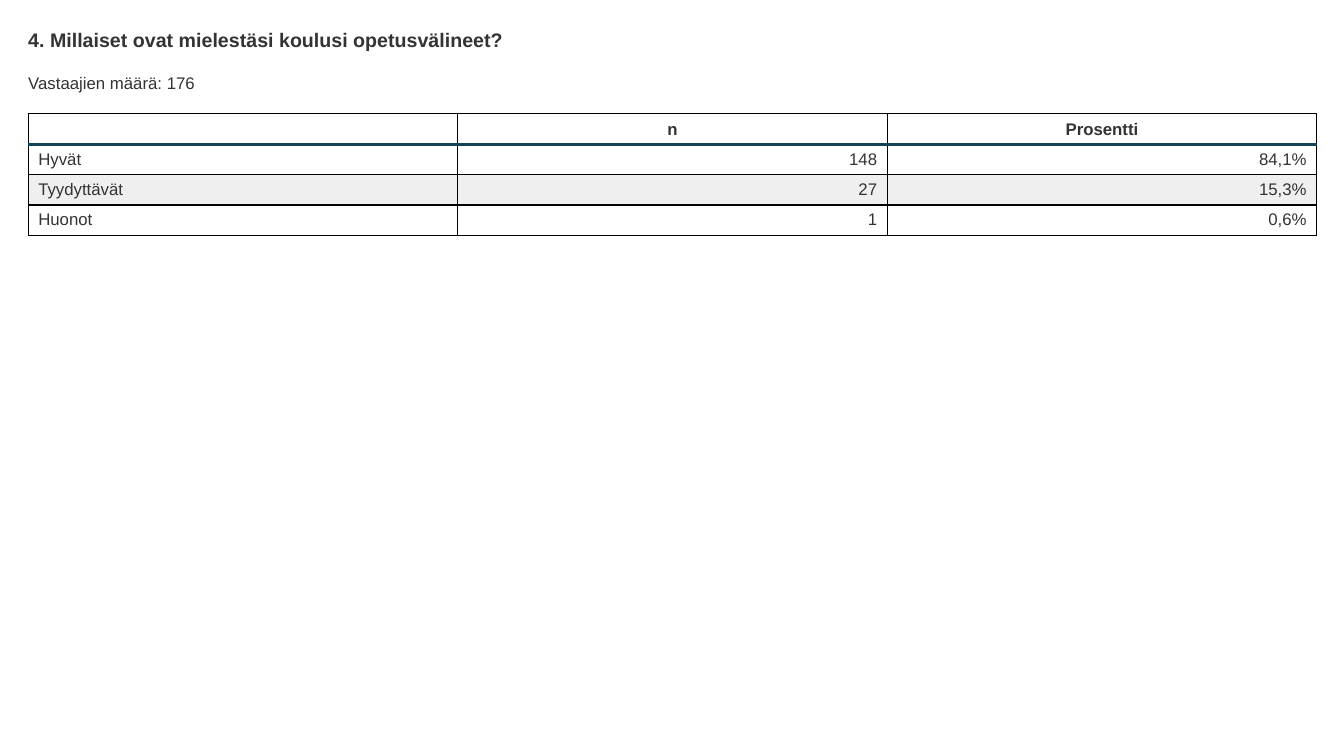
from dataclasses import dataclass

from lxml import etree
from pptx import Presentation
from pptx.dml.color import RGBColor
from pptx.enum.text import MSO_ANCHOR, MSO_AUTO_SIZE, PP_ALIGN
from pptx.oxml.ns import qn
from pptx.util import Inches, Pt

LEFT, MID, RIGHT = PP_ALIGN.LEFT, PP_ALIGN.CENTER, PP_ALIGN.RIGHT
TOP, CENTER = MSO_ANCHOR.TOP, MSO_ANCHOR.MIDDLE
FIXED = MSO_AUTO_SIZE.NONE


@dataclass(frozen=True)
class Theme:
    """Hold the colours, type sizes and line widths."""
    font: str = "Arial"
    ink: str = "333333"
    rule: str = "124456"
    grid: str = "000000"
    band: str = "EFEFEF"
    plain: str = "FFFFFF"
    head: int = 14
    body: int = 12
    thin: int = 1
    thick: int = 2


THEME = Theme()
EDGE, WIDE = 0.28, 12.78
ROW = 0.3
ROWS = [
    ("", "n", "Prosentti"),
    ("Hyvät", "148", "84,1%"),
    ("Tyydyttävät", "27", "15,3%"),
    ("Huonot", "1", "0,6%"),
]


def style(para, size, bold, align):
    """Format a paragraph and its runs."""
    para.alignment = align
    for run in para.runs:
        font = run.font
        font.name, font.size, font.bold = THEME.font, Pt(size), bold
        font.color.rgb = RGBColor.from_string(THEME.ink)


def write(shape, text, top, high, size, bold):
    """Place a line of text across the slide."""
    shape.left, shape.top = Inches(EDGE), Inches(top)
    shape.width, shape.height = Inches(WIDE), Inches(high)
    frame = shape.text_frame
    frame.text = text
    frame.word_wrap = True
    frame.auto_size = FIXED
    frame.vertical_anchor = TOP
    frame.margin_left = frame.margin_right = 0
    frame.margin_top = frame.margin_bottom = 0
    style(frame.paragraphs[0], size, bold, LEFT)


def border(cell, side, color, width):
    """Draw one side of a cell."""
    props = cell._tc.get_or_add_tcPr()
    line = etree.SubElement(props, qn(f"a:ln{side}"), w=str(Pt(width)))
    fill = etree.SubElement(line, qn("a:solidFill"))
    etree.SubElement(fill, qn("a:srgbClr"), val=color)


def fill_cell(cell, text, row, col):
    """Write, border and fill one table cell."""
    head = row == 0
    cell.text = text
    cell.vertical_anchor = CENTER
    para = cell.text_frame.paragraphs[0]
    align = MID if head else RIGHT if col else LEFT
    style(para, THEME.body, head, align)
    if not text:
        para._p.get_or_add_endParaRPr().set("sz", str(THEME.body * 100))
    rules = {"T": row == 1, "B": head}
    for side in "LRTB":
        if rules.get(side):
            border(cell, side, THEME.rule, THEME.thick)
        else:
            border(cell, side, THEME.grid, THEME.thin)
    cell.fill.solid()
    shade = THEME.band if row == 2 else THEME.plain
    cell.fill.fore_color.rgb = RGBColor.from_string(shade)


def add_grid(slide, rows, top):
    """Add the table of answers."""
    frame = slide.shapes.add_table(
        len(rows), len(rows[0]), Inches(EDGE), Inches(top),
        Inches(WIDE), Inches(ROW * len(rows)))
    table = frame.table
    table.first_row = table.horz_banding = False
    for row, texts in enumerate(rows):
        for col, text in enumerate(texts):
            fill_cell(table.cell(row, col), text, row, col)


def main():
    """Build and save the slide."""
    deck = Presentation()
    deck.slide_width, deck.slide_height = Inches(13.33), Inches(7.5)
    slide = deck.slides.add_slide(deck.slide_layouts[5])
    write(slide.shapes.title,
          "4. Millaiset ovat mielestäsi koulusi opetusvälineet?",
          0.28, 0.23, THEME.head, True)
    note = slide.shapes.add_textbox(0, 0, 0, 0)
    write(note, "Vastaajien määrä: 176", 0.72, 0.2, THEME.body, False)
    add_grid(slide, ROWS, 1.13)
    deck.save("out.pptx")


if __name__ == "__main__":
    main()
